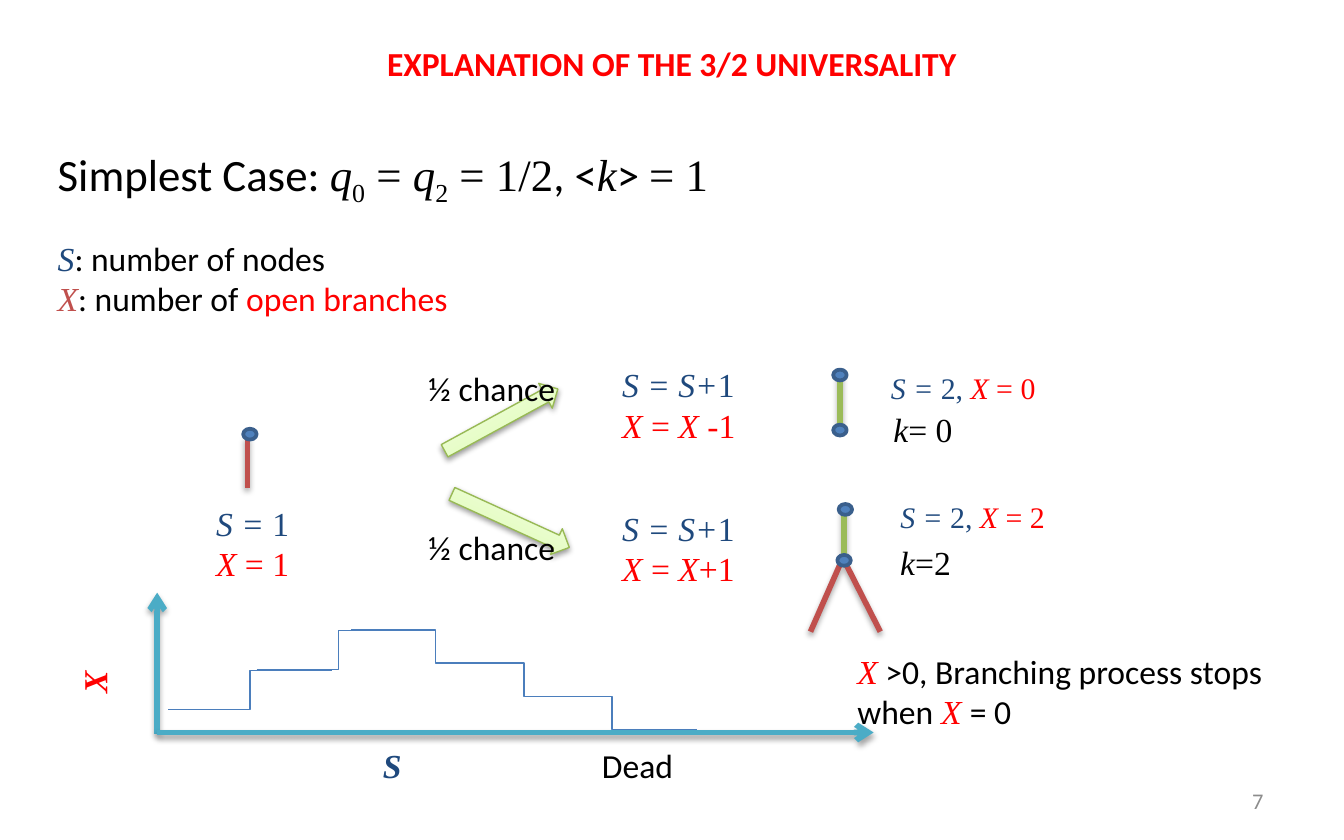
"""Build the slide that explains the 3/2 universality of branching processes."""
from copy import deepcopy
from dataclasses import dataclass
from typing import NamedTuple

from lxml import etree
from pptx import Presentation, util as u
from pptx.dml import color
from pptx.enum import shapes, text
from pptx.oxml import ns

SANS, SERIF = "Calibri", "Times New Roman"
BLACK, RED, NAVY, BRICK = "000000", "FF0000", "1F497D", "C0504D"
GREEN, TEAL, STEP, GRAY = "9BBB59", "4BACC6", "4B7EBC", "8C8C8C"
LEFT, MID, RIGHT = text.PP_ALIGN.LEFT, text.PP_ALIGN.CENTER, text.PP_ALIGN.RIGHT


class Run(NamedTuple):
    words: str
    hue: str = BLACK
    face: str = SANS
    slant: bool = False
    bold: bool = False
    sub: bool = False


@dataclass
class Label:
    x: float
    y: float
    w: float
    h: float
    lines: list[list[Run]]
    size: float = 18
    wrap: bool = False
    turn: float = 0
    align: text.PP_ALIGN = LEFT
    fixed: bool = False


class Link(NamedTuple):
    x1: float
    y1: float
    x2: float
    y2: float
    hue: str
    width: float = 3
    head: bool = False
    bent: bool = False


class Arrow(NamedTuple):
    x: float
    y: float
    turn: float


def tint(code: str) -> color.RGBColor:
    """Turn a hex string into a colour."""
    return color.RGBColor.from_string(code)


def sym(words: str, hue: str = BLACK, bold: bool = False) -> Run:
    """Make an italic serif run."""
    return Run(words, hue, SERIF, True, bold)


def num(words: str, hue: str = BLACK, sub: bool = False) -> Run:
    """Make an upright serif run."""
    return Run(words, hue, SERIF, sub=sub)


def shade(item, alpha: int = 0, blur: float = 3.1, drop: float = 1.8) -> None:
    """Replace the theme shadow by a soft one, or by none when alpha is zero."""
    group = etree.SubElement(item._element.spPr, ns.qn("a:effectLst"))
    if alpha:
        cast = etree.SubElement(group, ns.qn("a:outerShdw"), blurRad=str(u.Pt(blur)),
                                dist=str(u.Pt(drop)), dir="5400000", rotWithShape="0")
        hue = etree.SubElement(cast, ns.qn("a:srgbClr"), val=BLACK)
        etree.SubElement(hue, ns.qn("a:alpha"), val=str(alpha * 1000))


def draw_link(slide, link: Link) -> None:
    """Draw a straight or bent line, with an arrowhead if asked."""
    kind = shapes.MSO_CONNECTOR.ELBOW if link.bent else shapes.MSO_CONNECTOR.STRAIGHT
    item = slide.shapes.add_connector(kind, *map(u.Pt, link[:4]))
    item.line.color.rgb = tint(link.hue)
    item.line.width = u.Pt(link.width)
    if link.head:
        etree.SubElement(item.line._get_or_add_ln(), ns.qn("a:tailEnd"), type="arrow")
    shade(item, 0 if link.bent else 35)


def draw_node(slide, x: float, y: float) -> None:
    """Draw a tree node centred on a point."""
    w, h = 7.2, 5.8
    node = slide.shapes.add_shape(shapes.MSO_SHAPE.OVAL,
                                  *map(u.Pt, (x - w / 2, y - h / 2, w, h)))
    node.fill.solid()
    node.fill.fore_color.rgb = tint("4F81BD")
    node.line.color.rgb = tint("3A5F8C")
    node.line.width = u.Pt(2)
    shade(node)


def draw_arrow(slide, arrow: Arrow) -> None:
    """Draw a turned block arrow with a three-stop gradient."""
    item = slide.shapes.add_shape(shapes.MSO_SHAPE.RIGHT_ARROW,
                                  *map(u.Pt, (arrow.x, arrow.y, 69.1, 15.1)))
    item.rotation = arrow.turn
    item.fill.gradient()
    item.fill.gradient_angle = 90
    stops = item._element.spPr.find(".//" + ns.qn("a:gsLst"))
    stops.append(deepcopy(stops[-1]))
    for stop, (place, hue) in zip(item.fill.gradient_stops,
                                  ((0, "DAFDA7"), (0.35, "E4FCC2"), (1, "F5FFE7"))):
        stop.position = place
        stop.color.rgb = tint(hue)
    item.line.color.rgb = tint("98B955")
    item.line.width = u.Pt(0.75)
    shade(item, 38, drop=1.6)


def draw_label(slide, label: Label) -> None:
    """Draw a text box run by run."""
    box = slide.shapes.add_textbox(*map(u.Pt, (label.x, label.y, label.w, label.h)))
    box.rotation = label.turn
    frame = box.text_frame
    frame.word_wrap = label.wrap
    fit = text.MSO_AUTO_SIZE
    frame.auto_size = fit.NONE if label.fixed else fit.SHAPE_TO_FIT_TEXT
    if label.fixed:
        frame.vertical_anchor = text.MSO_ANCHOR.MIDDLE
    for i, line in enumerate(label.lines):
        para = frame.paragraphs[0] if i == 0 else frame.add_paragraph()
        para.alignment = label.align
        for run in line:
            part = para.add_run()
            part.text = run.words
            font = part.font
            font.size, font.name = u.Pt(label.size), run.face
            font.italic, font.bold = run.slant, run.bold
            font.color.rgb = tint(run.hue)
            if run.sub:
                font._element.set("baseline", "-25000")


LINKS = [
    Link(434.2, 338.4, 450, 302.4, BRICK),
    Link(471.6, 338.4, 452.2, 300.2, BRICK),
    Link(132.5, 261.4, 132.5, 234, BRICK),
    Link(450, 227.5, 450, 200.2, GREEN),
    Link(452.2, 300.2, 452.2, 272.2, GREEN),
    Link(84.2, 393.1, 84.2, 317.5, TEAL, head=True),
    Link(84.2, 392.4, 468, 392.4, TEAL, head=True),
]
CLIMBS = [Link(90 + 47.5 * i, 380.2 - 21.6 * i, 177.8 + 47.5 * i, 359.3 - 21.6 * i,
               STEP, 0.75, bent=True) for i in range(2)]
DROPS = [Link(188 + 47.2 * i, 337.5 + 17.8 * i, 279 + 47.2 * i, 355.3 + 17.8 * i,
              STEP, 0.75, bent=True) for i in range(3)]
NODES = [(133.9, 232.6), (450, 200.9), (450, 230.4), (452.9, 272.9), (452.2, 300.2)]
ARROWS = [Arrow(234, 217.4, 331.4), Arrow(239, 271.4, 24.5)]

GROW = [sym("S = S+", NAVY), num("1", NAVY)]
TWO = [sym("S = ", NAVY), num("2, ", NAVY), sym("X", RED)]
CHANCE = [[Run("½ chance")]]
LABELS = [
    Label(0, 20.2, 720, 27.4, [[Run("EXPLANATION OF THE 3/2 UNIVERSALITY", RED, bold=True)]],
          wrap=True, align=MID, fixed=True),
    Label(23.8, 74.9, 406, 36, [[
        Run("Simplest Case: "), sym("q"), num("0", sub=True), num(" = "), sym("q"),
        num("2", sub=True), num(" = 1/2"), Run(", <"), sym("k"), Run("> "), num("= 1")]],
        size=24, wrap=True),
    Label(23.8, 123.8, 226.8, 51.1, [
        [sym("S", NAVY), Run(": number of nodes")],
        [sym("X", BRICK), Run(": number of "), Run("open branches", RED)]]),
    Label(471.6, 215.3, 48.2, 28.8, [[sym("k"), num("= 0")]]),
    Label(475.2, 286.6, 43.2, 28.8, [[sym("k"), num("=2")]]),
    Label(326.2, 191.5, 77, 51.1,
          [GROW, [sym("X", RED), num(" = ", RED), sym("X ", RED), num("-1", RED)]]),
    Label(326.2, 268.6, 77, 51.1,
          [GROW, [sym("X", RED), num(" = ", RED), sym("X", RED), num("+1", RED)]]),
    Label(222.5, 193.7, 131.8, 28.8, CHANCE, wrap=True),
    Label(222.5, 278.6, 131.8, 28.8, CHANCE, wrap=True),
    Label(108.7, 265.7, 55.4, 51.1, [[sym("S = ", NAVY), num("1", NAVY)],
                                     [sym("X", RED), num(" = 1", RED)]]),
    Label(470.2, 194.4, 94.3, 26.6, [TWO + [num(" = 0", RED)]], size=16),
    Label(475.2, 263.5, 94.3, 26.6, [TWO + [num(" = 2", RED)]], size=16),
    Label(452.2, 344.9, 231.8, 51.1, [[
        sym("X", RED), Run(" >0, Branching process stops when "),
        sym("X ", RED), Run("= 0")]], wrap=True),
    Label(35.3, 349.2, 30.2, 28.8, [[sym("X", RED, True)]], turn=270),
    Label(198, 395.3, 27.4, 28.8, [[sym("S", NAVY, True)]]),
    Label(315.4, 395.3, 61.9, 28.8, [[Run("Dead")]], wrap=True),
    Label(516.2, 416.9, 167.8, 23.8, [[Run("7", GRAY)]], size=12, wrap=True,
          align=RIGHT, fixed=True),
]


def main() -> None:
    """Draw every part and save the deck."""
    deck = Presentation()
    deck.slide_width, deck.slide_height = u.Pt(720), u.Pt(450)
    slide = deck.slides.add_slide(deck.slide_layouts[6])
    for link in LINKS + CLIMBS + DROPS:
        draw_link(slide, link)
    for arrow in ARROWS:
        draw_arrow(slide, arrow)
    for x, y in NODES:
        draw_node(slide, x, y)
    for label in LABELS:
        draw_label(slide, label)
    deck.save("out.pptx")


if __name__ == "__main__":
    main()
